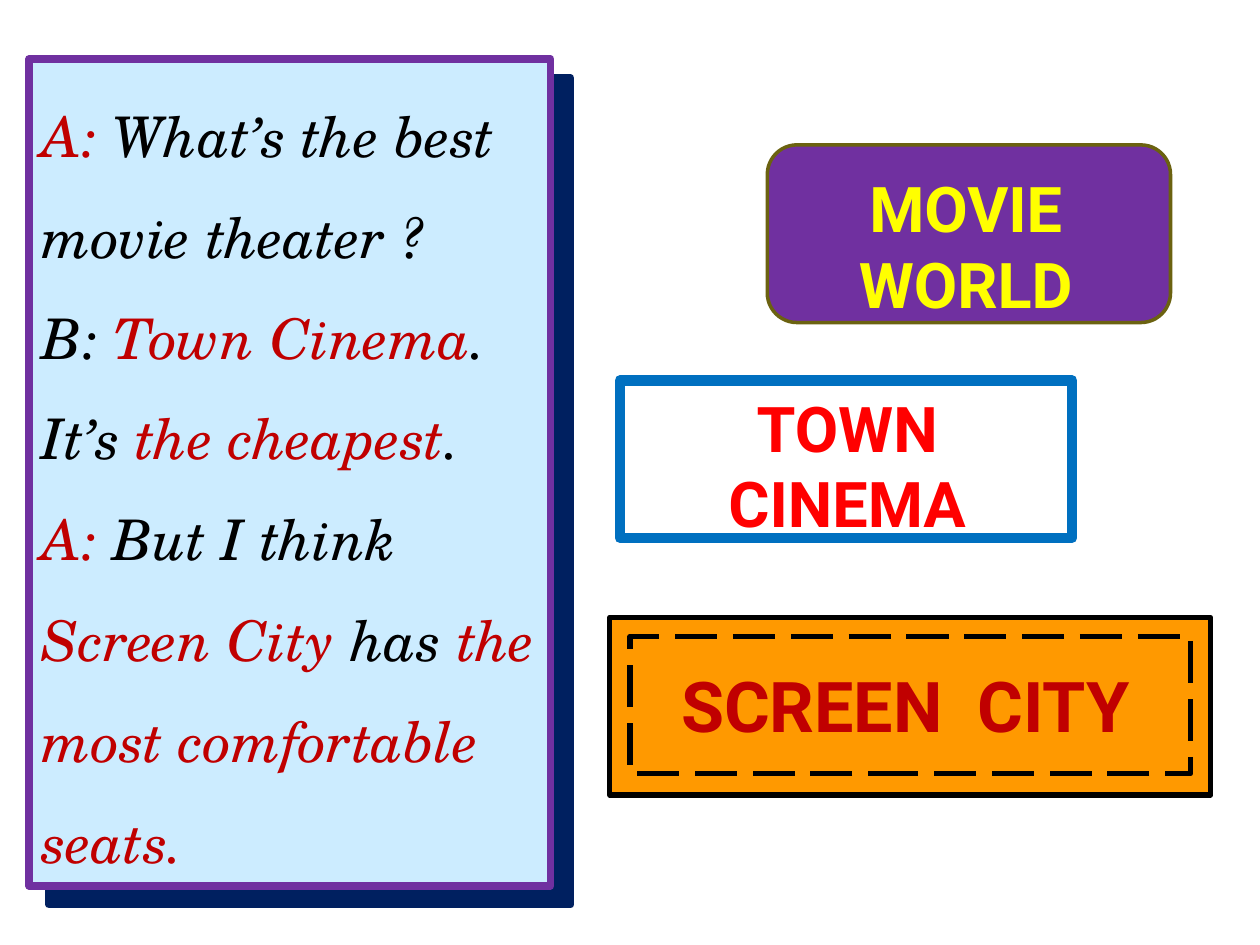
from pptx import Presentation
from pptx import util as u
from pptx.dml.color import RGBColor
from pptx.enum import dml, shapes, text

NAVY = RGBColor(0x00, 0x20, 0x60)
PURPLE = RGBColor(0x70, 0x30, 0xA0)
OLIVE = RGBColor(0x6B, 0x62, 0x10)
BLUE = RGBColor(0x00, 0x70, 0xC0)
ORANGE = RGBColor(0xFF, 0x99, 0x00)
PALE_BLUE = RGBColor(0xCC, 0xEC, 0xFF)
YELLOW = RGBColor(0xFF, 0xFF, 0x00)
RED = RGBColor(0xFF, 0x00, 0x00)
DARK_RED = RGBColor(0xC0, 0x00, 0x00)
BLACK = RGBColor(0x00, 0x00, 0x00)

RECT = shapes.MSO_SHAPE.RECTANGLE
ROUNDED = shapes.MSO_SHAPE.ROUNDED_RECTANGLE

SIGN_FONT = "Roboto"
DIALOGUE_FONT = "TeX Gyre Schola"

# Each paragraph is a list of (words, colour)
DIALOGUE = [
    [("A:", DARK_RED), (" What’s the best movie theater ?", BLACK)],
    [("B: ", BLACK), ("Town Cinema", DARK_RED), (".", BLACK)],
    [("It’s ", BLACK), ("the cheapest", DARK_RED), (".", BLACK)],
    [("A:", DARK_RED), (" But I think ", BLACK), ("Screen City ", DARK_RED),
     ("has ", BLACK), ("the most comfortable seats.", DARK_RED)],
]


def points(box):
    return [u.Pt(length) for length in box]


def add_panel(slide, kind, box, fill, outline, weight, dash=None):
    panel = slide.shapes.add_shape(kind, *points(box))
    panel.shadow.inherit = False
    if fill is None:
        panel.fill.background()
    else:
        panel.fill.solid()
        panel.fill.fore_color.rgb = fill
    panel.line.color.rgb = outline
    panel.line.width = u.Pt(weight)
    if dash is not None:
        panel.line.dash_style = dash


def add_sign_name(slide, box, lines, size, colour):
    frame = slide.shapes.add_textbox(*points(box)).text_frame
    frame.word_wrap = True
    frame.text = "\n".join(lines)
    for line in frame.paragraphs:
        line.alignment = text.PP_ALIGN.CENTER
        for run in line.runs:
            run.font.name = SIGN_FONT
            run.font.size = u.Pt(size)
            run.font.bold = True
            run.font.color.rgb = colour


def add_dialogue(slide, box, speeches):
    frame = slide.shapes.add_textbox(*points(box)).text_frame
    frame.word_wrap = True
    frame.auto_size = text.MSO_AUTO_SIZE.SHAPE_TO_FIT_TEXT
    for index, speech in enumerate(speeches):
        line = frame.add_paragraph() if index else frame.paragraphs[0]
        line.line_spacing = 1.5
        for words, colour in speech:
            run = line.add_run()
            run.text = words
            run.font.name = DIALOGUE_FONT
            run.font.size = u.Pt(32)
            run.font.italic = True
            run.font.color.rgb = colour


def main():
    deck = Presentation()
    deck.slide_width, deck.slide_height = u.Pt(720), u.Pt(540)
    slide = deck.slides.add_slide(deck.slide_layouts[6])

    # Dark backing behind the dialogue card
    add_panel(slide, RECT, (28, 44.6, 298, 472.3), NAVY, NAVY, 4.5)

    # Movie World sign
    add_panel(slide, ROUNDED, (438.5, 82.8, 230.4, 101.5), PURPLE, OLIVE, 2)
    add_sign_name(slide, (416.2, 93.6, 271.4, 77), ["MOVIE", "WORLD"], 36, YELLOW)

    # Town Cinema sign
    add_panel(slide, RECT, (354.2, 217.4, 258.5, 90), None, BLUE, 6)
    add_sign_name(slide, (348.5, 218.9, 271.4, 77), ["TOWN", "CINEMA"], 36, RED)

    # Screen City sign with its dashed inner border
    add_panel(slide, RECT, (348.5, 352.8, 343.4, 101.5), ORANGE, BLACK, 3)
    add_sign_name(slide, (298.1, 375.1, 438.5, 77), ["SCREEN  CITY"], 40, DARK_RED)
    add_panel(slide, RECT, (360, 363.6, 320.4, 78.5), None, BLACK, 3,
              dml.MSO_LINE.LONG_DASH)

    # Dialogue card
    add_panel(slide, RECT, (16.6, 33.8, 298, 472.3), PALE_BLUE, PURPLE, 4.5)
    add_dialogue(slide, (16.6, 35.3, 309.6, 472.3), DIALOGUE)

    deck.save("out.pptx")


if __name__ == "__main__":
    main()
